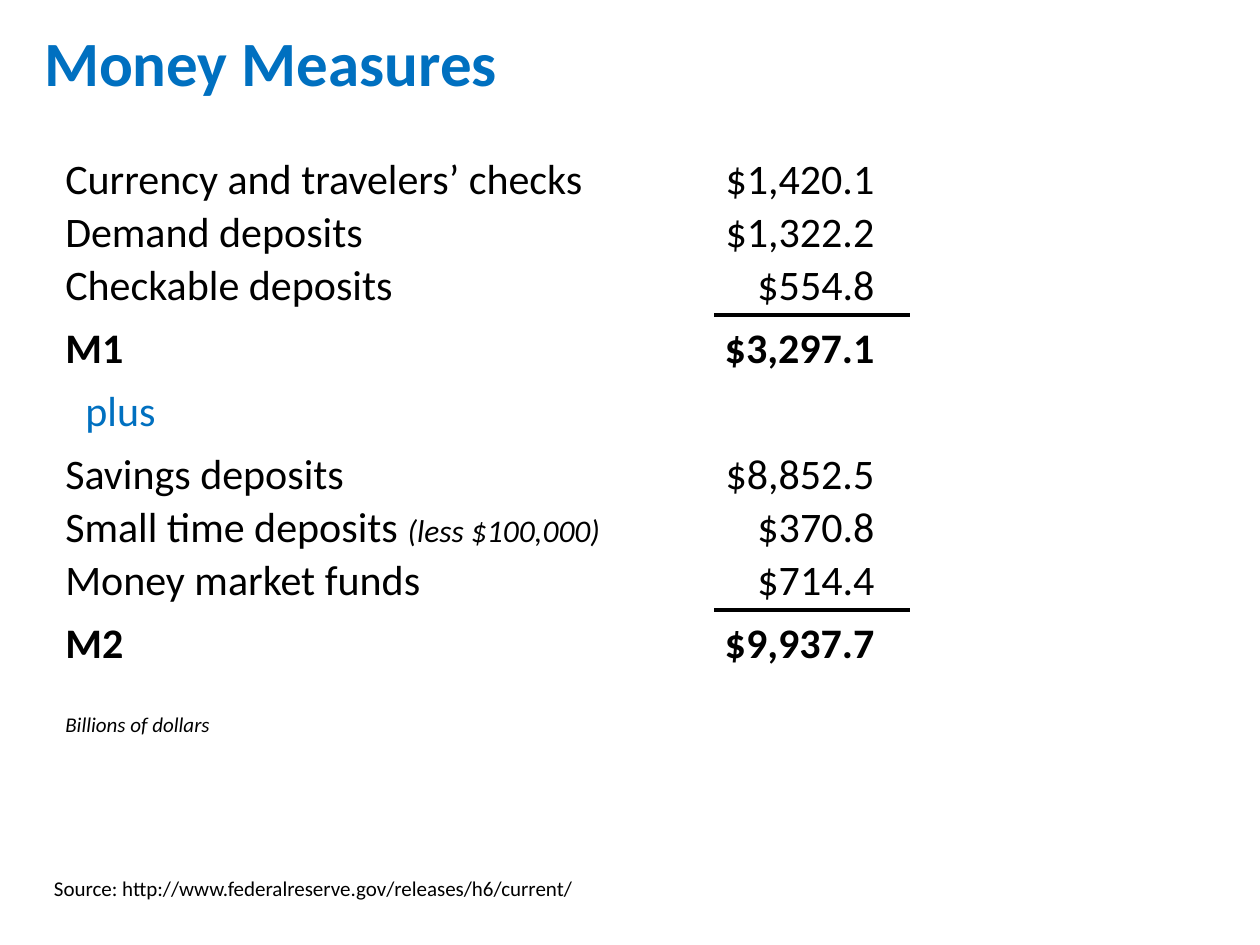
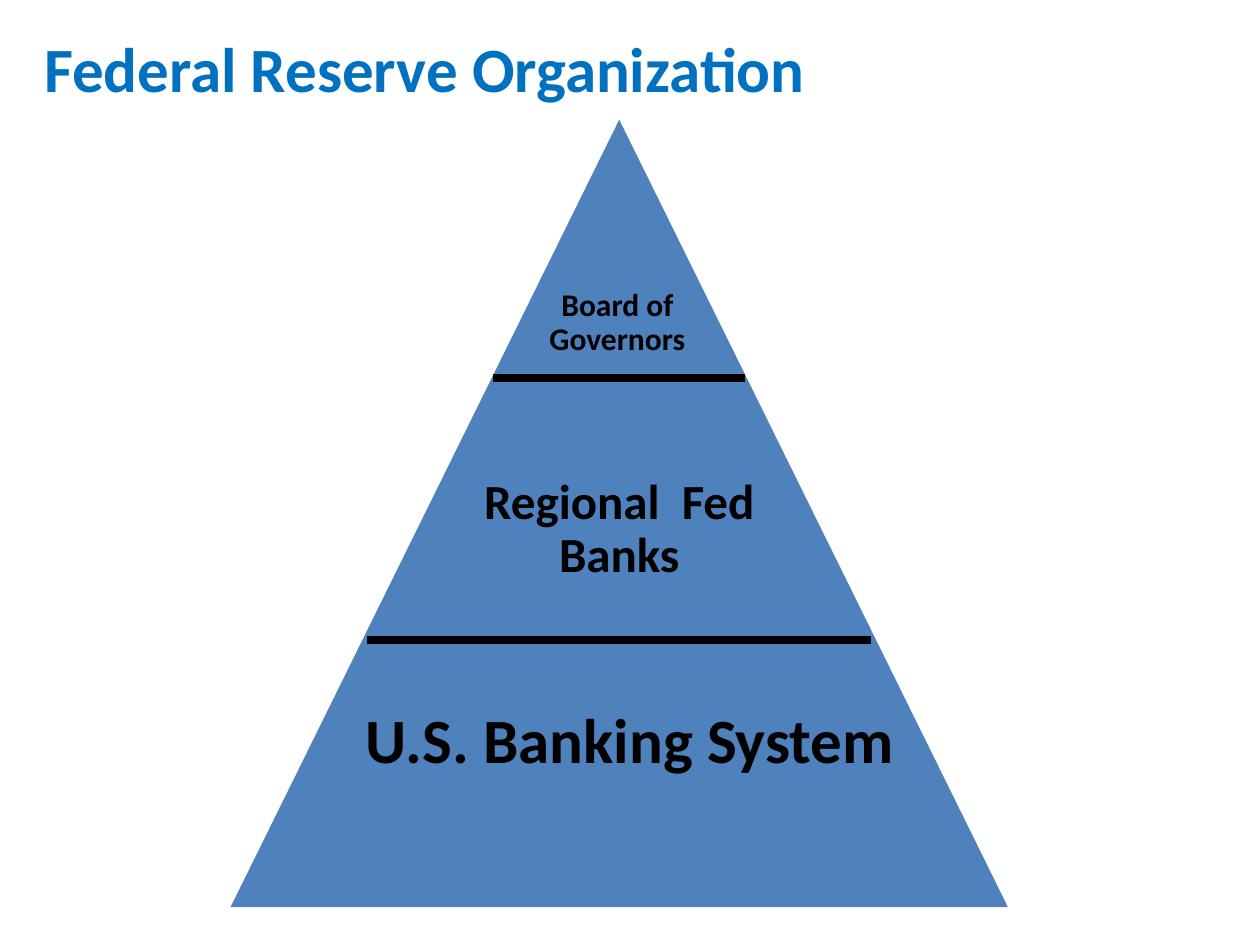
"""Build two slides: the M1 and M2 money measures, and the Federal Reserve pyramid."""
from lxml.etree import SubElement
from pptx import Presentation
from pptx.dml.color import RGBColor
from pptx.enum.shapes import MSO_CONNECTOR as Connector, MSO_SHAPE as Shape
from pptx.enum.text import MSO_ANCHOR as Anchor, PP_ALIGN as Align
from pptx.oxml.ns import qn
from pptx.util import Inches, Pt

FONT = "Calibri"
BLACK, ACCENT, PYRAMID_FILL = "000000", "0070C0", "4F81BD"
SLIDE_W, SLIDE_H = 10, 7.5

MEASURES = [
    ("M1", "$3,297.1", [
        ("Currency and travelers’ checks", "", "$1,420.1"),
        ("Demand deposits", "", "$1,322.2"),
        ("Checkable deposits", "", "$554.8"),
    ]),
    ("M2", "$9,937.7", [
        ("Savings deposits", "", "$8,852.5"),
        ("Small time deposits ", "(less $100,000)", "$370.8"),
        ("Money market funds", "", "$714.4"),
    ]),
]
FOOTNOTES = [
    ("Billions of dollars", (0.42, 5.62, 2.29, 0.28), True),
    ("Source: http://www.federalreserve.gov/releases/h6/current/", (0.33, 6.92, 5, 0.28), False),
]
LEVELS = [
    ("Board of Governors", 18, (4.21, 2.25, 1.38, 0.65)),
    ("Regional  Fed Banks", 28, (3.33, 3.74, 3.17, 0.95)),
    ("U.S. Banking System", 36, (2.5, 5.58, 5, 0.65)),
]
PYRAMID = (1.83, 0.95, 6.17, 6.25)
DIVIDERS = [(3, 2), (5.08, 4)]

LABEL_X, LABEL_W = 0.42, 5
AMOUNT_X, AMOUNT_W, AMOUNT_INSETS = 5.67, 1.55, (0, 0.28)
FIRST_ROW, ROW_H, GAP = 1.24, 0.42, 0.08


def color(hex_string):
    return RGBColor.from_string(hex_string)


def write(frame, text, note="", size=24, fill=BLACK, bold=False, italic=False,
          align=Align.LEFT, spacing=0.9, insets=(0.1, 0.1)):
    frame.word_wrap = True
    frame.margin_left, frame.margin_right = map(Inches, insets)
    paragraph = frame.paragraphs[0]
    paragraph.alignment = align
    paragraph.line_spacing = spacing
    for words, points, slanted in ((text, size, italic), (note, size * 0.75, True)):
        if words:
            run = paragraph.add_run()
            run.text = words
            run.font.name = FONT
            run.font.size = Pt(points)
            run.font.bold = bold
            run.font.italic = slanted
            run.font.color.rgb = color(fill)


def add_text(slide, box, text, **style):
    write(slide.shapes.add_textbox(*map(Inches, box)).text_frame, text, **style)


def add_rule(slide, left, y, width, points):
    ends = map(Inches, (left, y, left + width, y))
    rule = slide.shapes.add_connector(Connector.STRAIGHT, *ends)
    rule.line.color.rgb = color(BLACK)
    rule.line.width = Pt(points)
    SubElement(rule._element.spPr, qn("a:effectLst"))


def add_titled_slide(deck, text, box, spacing):
    slide = deck.slides.add_slide(deck.slide_layouts[5])
    title = slide.shapes.title
    title.left, title.top, title.width, title.height = map(Inches, box)
    title.text_frame.vertical_anchor = Anchor.MIDDLE
    write(title.text_frame, text, size=36, fill=ACCENT, bold=True, spacing=spacing)
    return slide


def add_row(slide, y, label, amount, note="", bold=False):
    add_text(slide, (LABEL_X, y, LABEL_W, ROW_H), label, note=note, bold=bold, spacing=0.8)
    add_text(slide, (AMOUNT_X, y, AMOUNT_W, ROW_H), amount, bold=bold, spacing=0.8,
             align=Align.RIGHT, insets=AMOUNT_INSETS)


def build_measures(deck):
    slide = add_titled_slide(deck, "Money Measures", (0.25, 0.24, 5.75, 0.6), 0.8)
    y = FIRST_ROW
    for index, (total, total_amount, parts) in enumerate(MEASURES):
        if index:
            add_text(slide, (0.58, y, LABEL_W, ROW_H), "plus", fill=ACCENT, spacing=0.8)
            y += ROW_H + GAP
        for label, note, amount in parts:
            add_row(slide, y, label, amount, note)
            y += ROW_H
        add_rule(slide, AMOUNT_X, y, AMOUNT_W, 2)
        y += GAP
        add_row(slide, y, total, total_amount, bold=True)
        y += ROW_H + GAP
    for text, box, italic in FOOTNOTES:
        add_text(slide, box, text, size=12, italic=italic)


def build_organization(deck):
    slide = add_titled_slide(deck, "Federal Reserve Organization", (0.25, 0.25, 8.58, 0.65), 0.9)
    pyramid = slide.shapes.add_shape(Shape.ISOSCELES_TRIANGLE, *map(Inches, PYRAMID))
    pyramid.shadow.inherit = False
    pyramid.fill.solid()
    pyramid.fill.fore_color.rgb = color(PYRAMID_FILL)
    pyramid.line.fill.background()
    center = PYRAMID[0] + PYRAMID[2] / 2
    for y, width in DIVIDERS:
        add_rule(slide, center - width / 2, y, width, 4.5)
    for text, size, box in LEVELS:
        add_text(slide, box, text, size=size, bold=True, align=Align.CENTER)


def main():
    deck = Presentation()
    deck.slide_width, deck.slide_height = Inches(SLIDE_W), Inches(SLIDE_H)
    build_measures(deck)
    build_organization(deck)
    deck.save("out.pptx")


if __name__ == "__main__":
    main()
